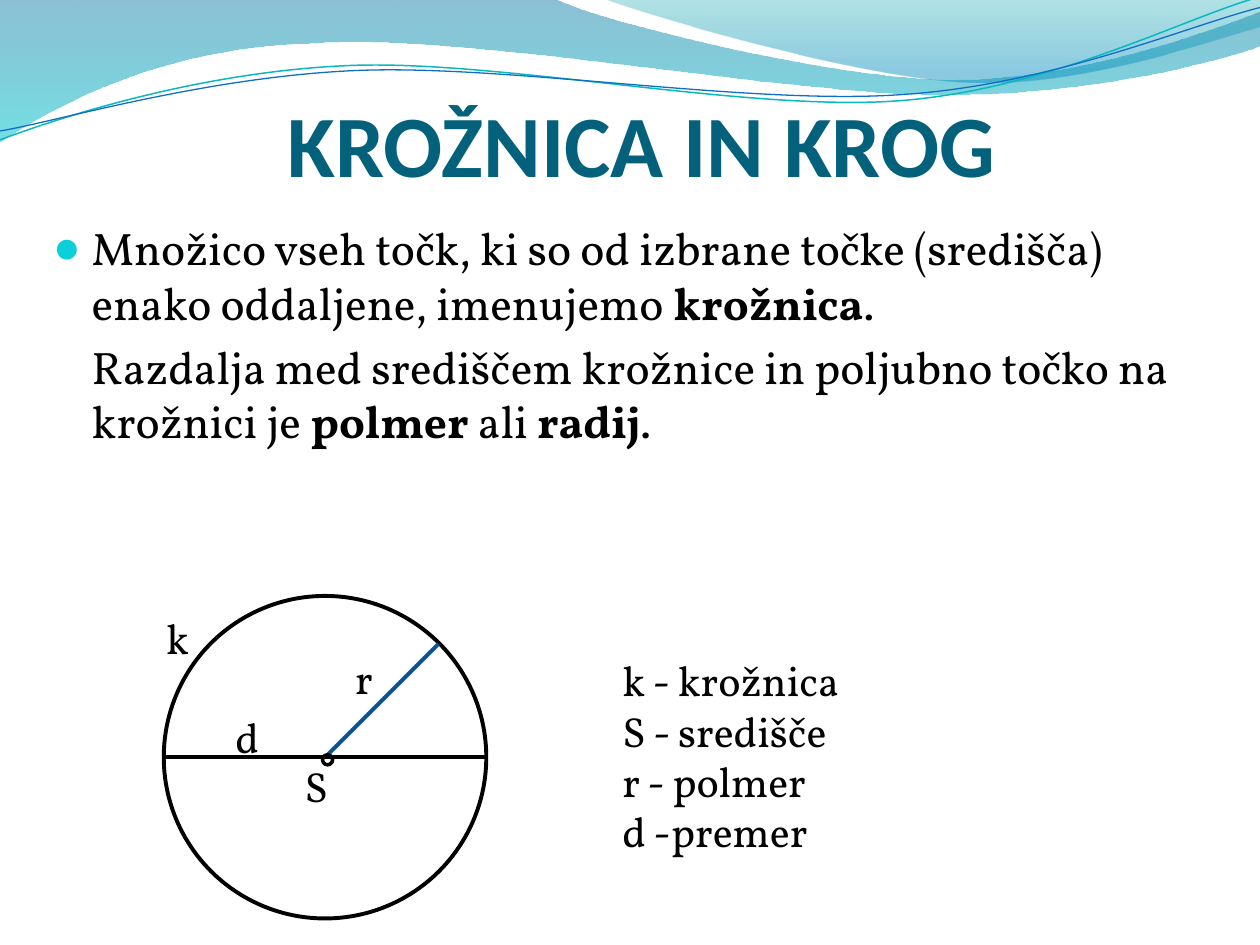
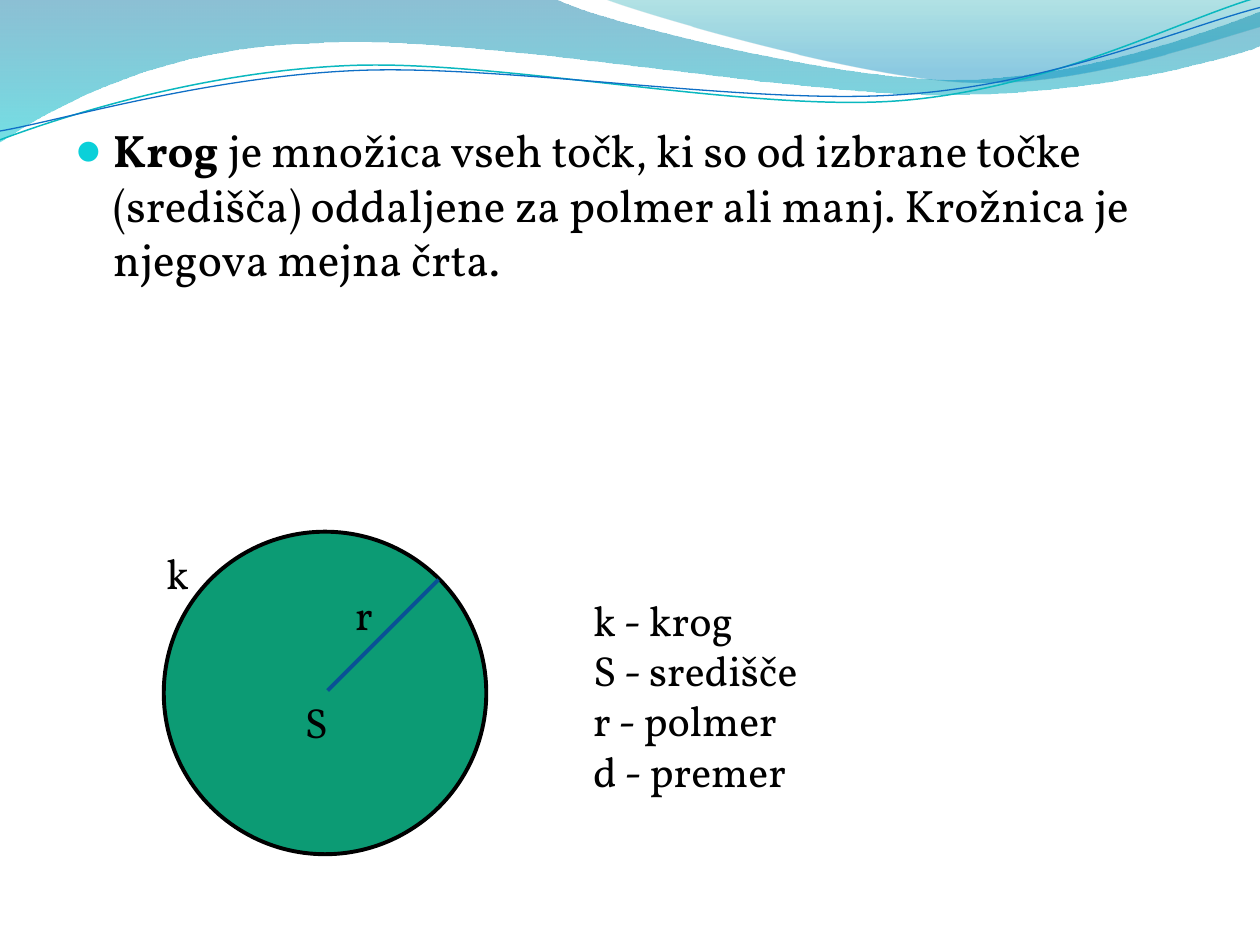
"""Builds two slides about the circle and the disc."""
import math
from lxml import etree
from pptx import Presentation
from pptx import util as u
from pptx.dml.color import RGBColor
from pptx.enum import shapes, text
from pptx.oxml.ns import qn

COLORS = {
    "title": "04617B", "ink": "000000", "bullet": "0BD0D9",
    "radius": "095295", "disc": "0C9B74",
    "teal_line": "0AB8BF", "blue_line": "0F6FC6",
    "deep": "0074A1", "aqua": "00C6CF", "sea": "00A1A9", "sky": "008BBF",
}
TITLE_FONT, BODY_FONT = "Calibri", "Vollkorn"
DIAMETER = 2.56
CIRCLE_LEFT = 1.3
WAVE_TILT = -2.7

WIDE_BAND = [
    [(0, 0)], [(4.4, -0.01)],
    [(4.76, 0.17), (6.64, 0.63), (7.58, 0.63)],
    [(8.53, 0.63), (9.58, 0.26), (10, 0.09)], [(10.01, 0.36)],
    [(9.83, 0.44), (8.7, 0.76), (7.46, 0.75)],
    [(6.22, 0.75), (3.82, 0.28), (2.57, 0.34)],
    [(1.29, 0.36), (0.46, 0.83), (-0.01, 1.13)], [(0, 0)],
]
RIGHT_BAND = [
    [(4.79, -0.01)],
    [(5.09, 0.11), (6.82, 0.62), (7.69, 0.65)],
    [(8.56, 0.69), (9.61, 0.32), (10, 0.21)], [(10, 0)], [(4.79, -0.01)],
]
TEAL_WAVE = [
    [(0, 1.11)],
    [(0.48, 0.93), (1.58, 0.57), (2.77, 0.52)],
    [(3.95, 0.47), (5.93, 0.89), (7.13, 0.8)],
    [(8.33, 0.71), (9.38, 0.15), (9.98, -0.02)],
]
BLUE_WAVE = [
    [(0, 1.04)],
    [(0.47, 0.96), (1.64, 0.61), (2.83, 0.56)],
    [(4.03, 0.51), (5.97, 0.84), (7.17, 0.75)],
    [(8.36, 0.67), (9.41, 0.21), (10, 0.06)],
]


def rgb(name):
    """Return the named colour."""
    return RGBColor.from_string(COLORS[name])


def set_line(sp, color, width):
    """Give a shape or connector a solid line."""
    sp.line.color.rgb = rgb(color)
    sp.line.width = u.Pt(width)


def turn(point, center, degrees):
    """Turn a point clockwise about a centre."""
    a = math.radians(degrees)
    dx, dy = point[0] - center[0], point[1] - center[1]
    return (center[0] + dx * math.cos(a) - dy * math.sin(a),
            center[1] + dx * math.sin(a) + dy * math.cos(a))


def add_outline(s, segments, close):
    """Draw straight and cubic segments as one freeform."""
    emu = [(u.Inches(x), u.Inches(y)) for seg in segments for x, y in seg]
    builder = s.shapes.build_freeform(*emu[0])
    builder.add_line_segments(emu[1:], close=close)
    sp = builder.convert_to_shape()
    sp.shadow.inherit = False
    outline = next(sp._element.iter(qn("a:path")))
    lines = iter(outline.findall(qn("a:lnTo")))
    for seg in segments[1:]:
        steps = [next(lines) for _ in seg]
        if len(steps) == 3:
            curve = etree.Element(qn("a:cubicBezTo"))
            steps[0].addprevious(curve)
            for step in steps:
                curve.append(step[0])
                outline.remove(step)
    return sp


def add_band(s, segments, stops):
    """Draw a band with a translucent gradient running downwards."""
    sp = add_outline(s, segments, True)
    sp.line.fill.background()
    sp.fill.gradient()
    sp.fill.gradient_angle = 270
    for stop, (position, color, _) in zip(sp.fill.gradient_stops, stops):
        stop.position = position
        stop.color.rgb = rgb(color)
    for clr, (_, _, opacity) in zip(sp._element.spPr.iter(qn("a:srgbClr")), stops):
        etree.SubElement(clr, qn("a:alpha"), val=str(opacity * 1000))
    return sp


def add_wave(s, segments, center, color, width):
    """Draw an open wavy line as a tilted shape."""
    level = [[turn(pt, center, -WAVE_TILT) for pt in seg] for seg in segments]
    sp = add_outline(s, level, False)
    sp.rotation = WAVE_TILT
    sp.fill.background()
    set_line(sp, color, width)
    return sp


def add_header(prs, s):
    """Draw the bands and waves and hand them to the slide master."""
    parts = [
        add_band(s, WIDE_BAND, [(0, "deep", 45), (1, "aqua", 55)]),
        add_band(s, RIGHT_BAND, [(0, "sea", 30), (0.8, "sky", 45)]),
        add_wave(s, TEAL_WAVE, (4.99, 0.58), "teal_line", 0.85),
        add_wave(s, BLUE_WAVE, (5, 0.59), "blue_line", 0.75),
    ]
    for sp in parts:
        prs.slide_master.shapes._spTree.append(sp._element)


def add_run(p, words, size, bold=False, font=BODY_FONT, color="ink"):
    """Add one formatted run."""
    r = p.add_run()
    r.text = words
    r.font.size = u.Pt(size)
    r.font.name = font
    r.font.bold = bold
    r.font.color.rgb = rgb(color)


def add_box(s, x, y, w, h, anchor=text.MSO_ANCHOR.TOP):
    """Add a wrapping text box and return its frame."""
    tf = s.shapes.add_textbox(*map(u.Inches, (x, y, w, h))).text_frame
    tf.word_wrap = True
    tf.vertical_anchor = anchor
    return tf


def paragraphs(tf, items):
    """Yield a paragraph of the frame for each item."""
    for i, item in enumerate(items):
        yield (tf.add_paragraph() if i else tf.paragraphs[0]), item


def add_title(s, words):
    """Add the centred slide title."""
    tf = add_box(s, 0.51, 0.52, 9, 1.03, text.MSO_ANCHOR.BOTTOM)
    tf.margin_left, tf.margin_right, tf.margin_bottom = u.Inches(0.17), 0, 0
    p = tf.paragraphs[0]
    p.alignment = text.PP_ALIGN.CENTER
    add_run(p, words, 50, True, TITLE_FONT, "title")


def add_bullet(p):
    """Give a paragraph a round hanging bullet."""
    pPr = p._p.get_or_add_pPr()
    pPr.set("indent", str(-u.Inches(0.3)))
    clr = etree.SubElement(pPr, qn("a:buClr"))
    etree.SubElement(clr, qn("a:srgbClr"), val=COLORS["bullet"])
    etree.SubElement(pPr, qn("a:buSzPct"), val="95000")
    etree.SubElement(pPr, qn("a:buFont"), typeface=TITLE_FONT)
    etree.SubElement(pPr, qn("a:buChar"), char="●")


def add_body(s, x, y, w, h, items):
    """Add body text, with a bullet on its first paragraph."""
    tf = add_box(s, x, y, w, h)
    for p, runs in paragraphs(tf, items):
        p._p.get_or_add_pPr().set("marL", str(u.Inches(0.3)))
        if runs is items[0]:
            add_bullet(p)
        else:
            p.space_before = u.Pt(5.2)
        for words, bold in runs:
            add_run(p, words, 26, bold)


def add_legend(s, x, y, lines):
    """Add the list that explains the letters."""
    tf = add_box(s, x, y, 2.68, 1.65, text.MSO_ANCHOR.MIDDLE)
    for p, line in paragraphs(tf, lines):
        add_run(p, line, 24)


def add_round(s, kind, x, y, size, width, fill=None):
    """Add an outlined round shape."""
    sp = s.shapes.add_shape(kind, *map(u.Inches, (x, y, size, size)))
    sp.shadow.inherit = False
    set_line(sp, "ink", width)
    if fill:
        sp.fill.solid()
        sp.fill.fore_color.rgb = rgb(fill)
    else:
        sp.fill.background()


def add_line(s, start, end, color):
    """Add a straight line between two points."""
    sp = s.shapes.add_connector(shapes.MSO_CONNECTOR.STRAIGHT,
                                *map(u.Inches, (*start, *end)))
    set_line(sp, color, 2.25)
    etree.SubElement(sp._element.spPr, qn("a:effectLst"))


def add_label(s, letter, x, y):
    """Add a one-letter label."""
    tf = add_box(s, x, y, 0.55, 0.5)
    tf.auto_size = text.MSO_AUTO_SIZE.SHAPE_TO_FIT_TEXT
    add_run(tf.paragraphs[0], letter, 24)


def add_circle(s, top, fill=None, dotted=False):
    """Draw the labelled circle with its radius and optional centre point."""
    left = CIRCLE_LEFT
    add_round(s, shapes.MSO_SHAPE.OVAL, left, top, DIAMETER, 2.25, fill)
    add_line(s, (left + 2.18, top + 0.38), (left + 1.3, top + 1.26), "radius")
    if dotted:
        add_round(s, shapes.MSO_SHAPE.FLOWCHART_CONNECTOR,
                  left + 1.26, top + 1.26, 0.08, 2)
    for letter, dx, dy in (("S", 1.02, 1.26), ("r", 1.42, 0.4), ("k", -0.08, 0.08)):
        add_label(s, letter, left + dx, top + dy)


def add_diameter(s, top):
    """Draw the labelled diameter."""
    left, middle = CIRCLE_LEFT, top + DIAMETER / 2
    add_line(s, (left + DIAMETER, middle), (left, middle), "ink")
    add_label(s, "d", left + 0.47, top + 0.87)


def main():
    """Build and save both slides."""
    prs = Presentation()
    prs.slide_width, prs.slide_height = u.Inches(10), u.Inches(7.5)
    blank = prs.slide_layouts[6]

    s = prs.slides.add_slide(blank)
    add_header(prs, s)
    add_title(s, "KROŽNICA IN KROG")
    add_body(s, 0.33, 1.7, 9.5, 5.28, [
        [("Množico vseh točk, ki so od izbrane točke (središča) enako oddaljene, "
          "imenujemo ", False), ("krožnica", True), (".", False)],
        [("Razdalja med središčem krožnice in poljubno točko na krožnici je ", False),
         ("polmer", True), (" ali ", False), ("radij", True), (".", False)],
    ])
    add_circle(s, 4.73, dotted=True)
    add_legend(s, 4.84, 5.17, ["k - krožnica", "S - središče", "r - polmer", "d -premer"])
    add_diameter(s, 4.73)

    s = prs.slides.add_slide(blank)
    add_body(s, 0.5, 0.92, 9, 5.98, [
        [("Krog ", True),
         ("je množica vseh točk, ki so od izbrane točke (središča) oddaljene za polmer "
          "ali manj. Krožnica je njegova mejna črta.", False)],
    ])
    add_circle(s, 4.22, "disc")
    add_legend(s, 4.61, 4.69, ["k - krog", "S - središče", "r - polmer", "d - premer"])

    prs.save("out.pptx")


if __name__ == "__main__":
    main()
